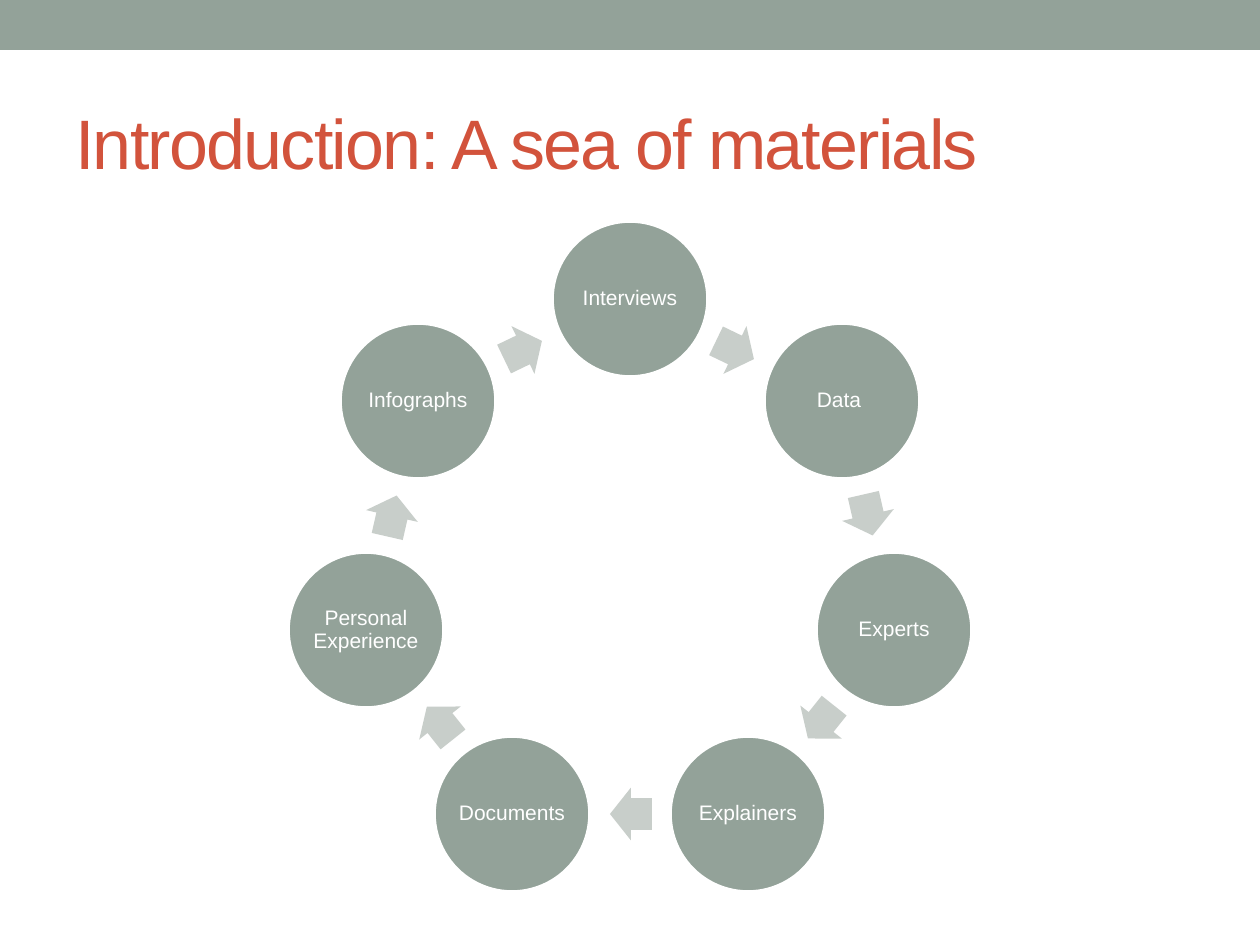
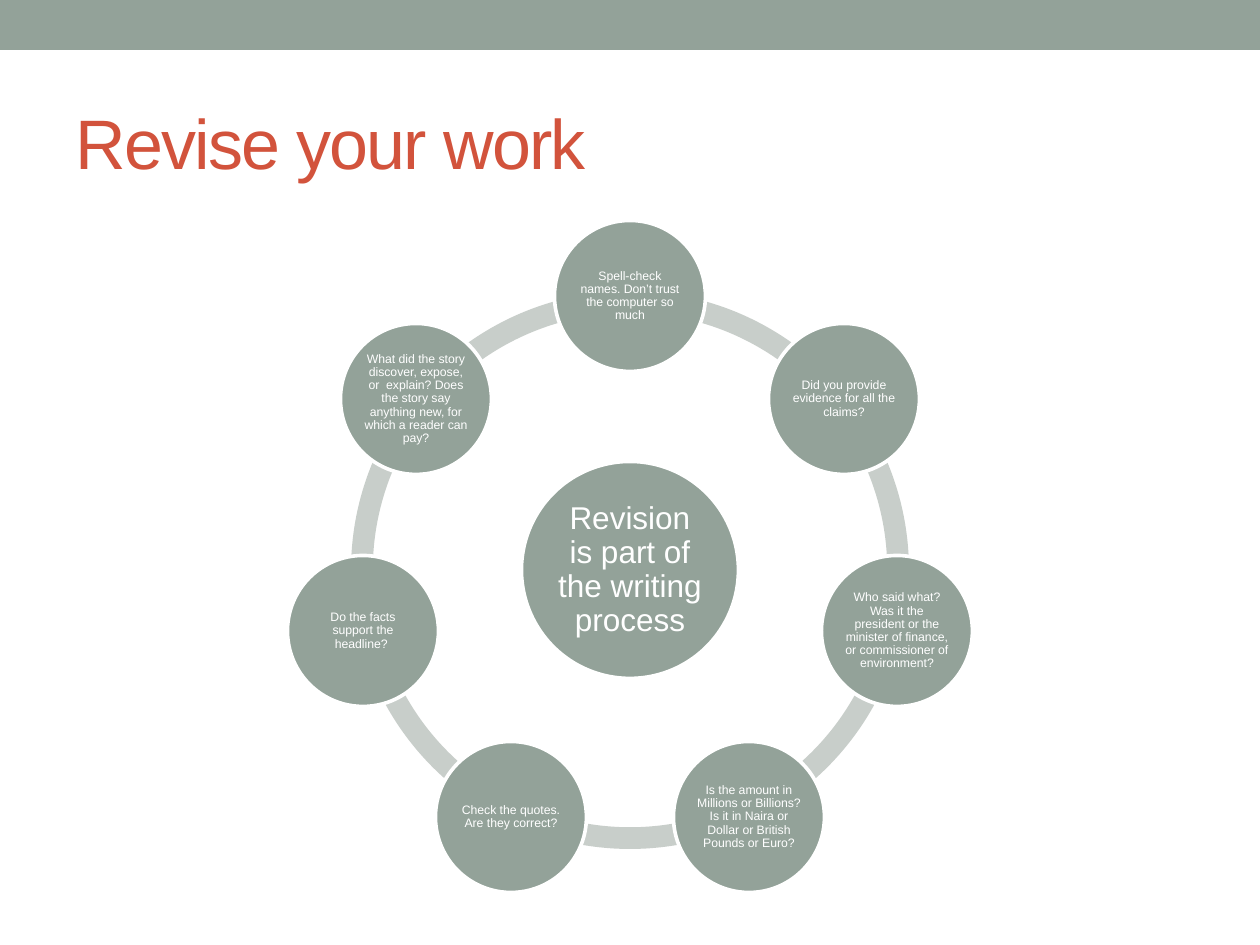
from math import cos, pi, radians, sin

from pptx import Presentation
from pptx.dml.color import RGBColor
from pptx.enum.shapes import MSO_SHAPE
from pptx.enum.text import MSO_ANCHOR, PP_ALIGN
from pptx.util import Emu, Pt

COLORS = {"sage": "93A299", "mist": "C8CECA", "brick": "D2533C", "white": "FFFFFF"}
FONT = "Arial"
EMU_PER_PX = 914400 / 126
CENTER_X, CENTER_Y = 630, 570

SOURCES = ["Interviews", "Data ", "Experts", "Explainers", "Documents",
           "Personal Experience", "Infographs"]
CHECKS = [
    "Spell-check names. Don’t trust the computer so much",
    "Did you provide evidence for all the claims?",
    "Who said what? Was it the president or the minister of finance, "
    "or commissioner of environment?",
    "Is the amount in Millions or Billions? Is it in Naira or Dollar "
    "or British Pounds or Euro?",
    "Check the quotes. Are they correct?",
    "Do the facts support the headline? ",
    "What did the story discover, expose, or  explain? Does the story say "
    "anything new, for which a reader can pay?",
]


def px(length):
    return Emu(round(length * EMU_PER_PX))


def on_ring(radius, angle):
    turn = radians(angle)
    return round(CENTER_X + radius * sin(turn)), round(CENTER_Y - radius * cos(turn))


class Deck:
    """Draws the shared slide style and each kind of element."""

    def __init__(self):
        self.prs = Presentation()
        self.prs.slide_width, self.prs.slide_height = px(1260), px(945)
        self.slide = None

    def new_slide(self, heading):
        self.slide = self.prs.slides.add_slide(self.prs.slide_layouts[6])
        self.shape(MSO_SHAPE.RECTANGLE, 630, 25, 1260, 50, "sage")
        self.title(heading)

    def shape(self, preset, center_x, center_y, width, height, color):
        shape = self.slide.shapes.add_shape(
            preset, px(center_x - width / 2), px(center_y - height / 2),
            px(width), px(height))
        shape.shadow.inherit = False
        shape.fill.solid()
        shape.fill.fore_color.rgb = RGBColor.from_string(COLORS[color])
        shape.line.fill.background()
        return shape

    def add_words(self, frame, text, size, color):
        frame.word_wrap = True
        frame.vertical_anchor = MSO_ANCHOR.MIDDLE
        run = frame.paragraphs[0].add_run()
        run.text = text
        run.font.name = FONT
        run.font.size = Pt(size)
        run.font.color.rgb = RGBColor.from_string(COLORS[color])
        return run

    def title(self, text):
        box = self.slide.shapes.add_textbox(px(63), px(73), px(1134), px(136))
        run = self.add_words(box.text_frame, text, 40, "brick")
        run.font._element.set("spc", "-100")

    def disc(self, center, diameter, text, size, inset):
        disc = self.shape(MSO_SHAPE.OVAL, *center, diameter, diameter, "sage")
        disc.line.color.rgb = RGBColor.from_string(COLORS["white"])
        disc.line.width = Pt(2.08)
        frame = disc.text_frame
        frame.margin_left = frame.margin_right = px(inset)
        frame.margin_top = frame.margin_bottom = px(inset)
        self.add_words(frame, text, size, "white")
        frame.paragraphs[0].alignment = PP_ALIGN.CENTER
        frame.paragraphs[0].line_spacing = 0.9

    def arrow(self, center, angle):
        arrow = self.shape(MSO_SHAPE.RIGHT_ARROW, *center, 42, 53, "mist")
        arrow.adjustments[0], arrow.adjustments[1] = 0.6, 0.5
        arrow.rotation = angle

    def arc(self, diameter, start, end):
        arc = self.shape(MSO_SHAPE.BLOCK_ARC, CENTER_X, CENTER_Y,
                         diameter, diameter, "mist")
        for index, angle in enumerate((start, end)):
            arc.adjustments[index] = (angle - 90) % 360 * 0.6
        arc.adjustments[2] = 0.039


def sources_slide(deck):
    deck.new_slide("Introduction: A sea of materials")
    step = 360 / len(SOURCES)
    radius = 271
    for index, source in enumerate(SOURCES):
        deck.disc(on_ring(radius, index * step), 156, source, 12, 2)
        heading = (index + 0.5) * step
        midpoint = on_ring(radius * cos(pi / len(SOURCES)), heading - 0.2)
        deck.arrow(midpoint, heading)


def revision_slide(deck):
    deck.new_slide("Revise your work")
    step = 360 / len(CHECKS)
    for index in range(len(CHECKS)):
        deck.arc(558, index * step, (index + 1) * step)
    deck.disc((CENTER_X, CENTER_Y), 217, "Revision is part of the writing process", 18, 3)
    for index, check in enumerate(CHECKS):
        deck.disc(on_ring(274, index * step), 151, check, 7, 1)


def main():
    deck = Deck()
    sources_slide(deck)
    revision_slide(deck)
    deck.prs.save("out.pptx")


if __name__ == "__main__":
    main()
